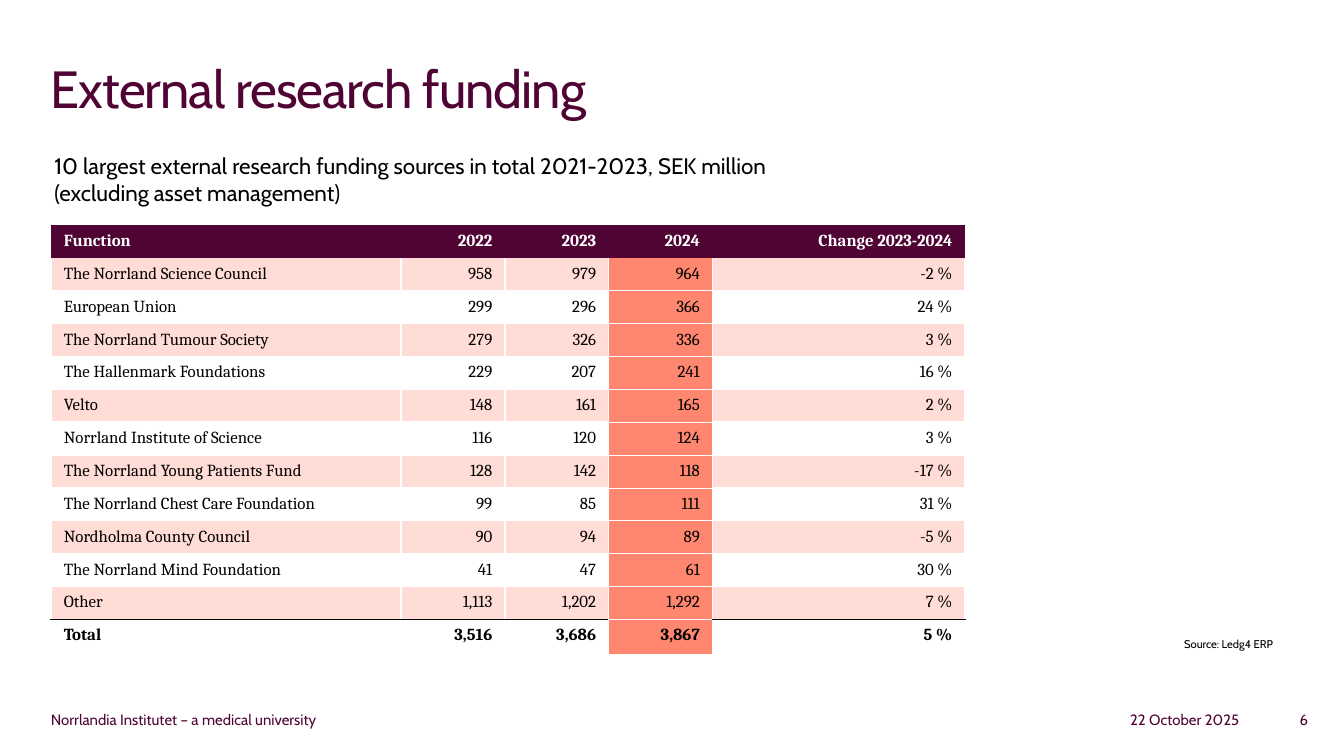
import pptx
import pptx.util
import pptx.dml.color
import pptx.enum.text
import pptx.oxml.ns
import lxml.etree

Pt = pptx.util.Pt
RGB = pptx.dml.color.RGBColor
LEFT = pptx.enum.text.PP_ALIGN.LEFT
RIGHT = pptx.enum.text.PP_ALIGN.RIGHT
qn = pptx.oxml.ns.qn

PLUM = RGB(0x4F, 0x04, 0x33)
CORAL = RGB(0xFF, 0x87, 0x6F)
BLUSH = RGB(0xFF, 0xDD, 0xD6)
BLACK = RGB(0, 0, 0)
WHITE = RGB(0xFF, 0xFF, 0xFF)

HIGHLIGHT_COL = 3
COL_WIDTHS = [187.5, 55.6, 55.6, 55.6, 135.3]
ROW_HEIGHT, TOTAL_HEIGHT = 16.6, 18.7
FUNDING = [
    ("Function", "2022", "2023", "2024", "Change 2023-2024"),
    ("The Norrland Science Council", "958", "979", "964", "-2 %"),
    ("European Union", "299", "296", "366", "24 %"),
    ("The Norrland Tumour Society", "279", "326", "336", "3 %"),
    ("The Hallenmark Foundations", "229", "207", "241", "16 %"),
    ("Velto", "148", "161", "165", "2 %"),
    ("Norrland Institute of Science", "116", "120", "124", "3 %"),
    ("The Norrland Young Patients Fund", "128", "142", "118", "-17 %"),
    ("The Norrland Chest Care Foundation", "99", "85", "111", "31 %"),
    ("Nordholma County Council", "90", "94", "89", "-5 %"),
    ("The Norrland Mind Foundation", "41", "47", "61", "30 %"),
    ("Other", "1,113", "1,202", "1,292", "7 %"),
    ("Total", "3,516", "3,686", "3,867", "5 %"),
]
TOTAL_ROW = len(FUNDING) - 1


def add_run(p, text, size, color, font="Cabin", bold=False):
    r = p.add_run()
    r.text = text
    r.font.name = font
    r.font.size = Pt(size)
    r.font.bold = bold
    r.font.color.rgb = color
    return r


def add_text(s, box, lines, size, color, align=LEFT, spacing=0):
    tf = s.shapes.add_textbox(*map(Pt, box)).text_frame
    tf.word_wrap = True
    p = tf.paragraphs[0]
    p.alignment = align
    for i, line in enumerate(lines):
        if i:
            p.add_line_break()
        r = add_run(p, line, size, color)
        if spacing:
            r.font._element.set("spc", str(round(spacing * 100)))


def add_border(cell, side, border):
    ln = lxml.etree.SubElement(cell._tc.get_or_add_tcPr(), qn("a:ln" + side))
    if border is None:
        ln.set("w", "0")
        lxml.etree.SubElement(ln, qn("a:noFill"))
        return
    color, width = border
    ln.set("w", str(Pt(width)))
    fill = lxml.etree.SubElement(ln, qn("a:solidFill"))
    lxml.etree.SubElement(fill, qn("a:srgbClr")).set("val", str(color))


def row_rule(row, col):
    if row == 0:
        return None
    if col == HIGHLIGHT_COL:
        return WHITE, 0.25
    return (BLACK, 0.5) if row == TOTAL_ROW - 1 else (WHITE, 1)


def column_rule(col):
    return WHITE, 0.25 if col in (HIGHLIGHT_COL, HIGHLIGHT_COL + 1) else 1


def cell_borders(row, col):
    body = 0 < row < TOTAL_ROW
    return {
        "L": column_rule(col) if body else None,
        "R": column_rule(col + 1) if body else None,
        "T": row_rule(row - 1, col) if row else None,
        "B": row_rule(row, col) if body else None,
    }


def cell_fill(row, col):
    if row == 0:
        return PLUM
    if col == HIGHLIGHT_COL:
        return CORAL
    return BLUSH if row % 2 and row < TOTAL_ROW else WHITE


def style_cell(cell, text, row, col):
    for side, border in cell_borders(row, col).items():
        add_border(cell, side, border)
    cell.fill.solid()
    cell.fill.fore_color.rgb = cell_fill(row, col)
    cell.margin_left = cell.margin_right = Pt(6.8)
    cell.margin_top = cell.margin_bottom = Pt(3.4)
    p = cell.text_frame.paragraphs[0]
    p.alignment = RIGHT if col else LEFT
    color = BLACK if row else WHITE
    add_run(p, text, 9, color, "Cambria", row in (0, TOTAL_ROW))


def add_funding_table(s, left, top):
    heights = [ROW_HEIGHT] * TOTAL_ROW + [TOTAL_HEIGHT]
    table = s.shapes.add_table(
        len(heights), len(COL_WIDTHS),
        Pt(left), Pt(top), Pt(sum(COL_WIDTHS)), Pt(sum(heights))).table
    table.horz_banding = False
    for column, width in zip(table.columns, COL_WIDTHS):
        column.width = Pt(width)
    for row, (values, height) in enumerate(zip(FUNDING, heights)):
        table.rows[row].height = Pt(height)
        for col, text in enumerate(values):
            style_cell(table.cell(row, col), text, row, col)


def main():
    prs = pptx.Presentation()
    prs.slide_width, prs.slide_height = Pt(720), Pt(405)
    s = prs.slides.add_slide(prs.slide_layouts[6])
    add_text(s, (20.2, 26.6, 612, 35.3), ["External research funding"], 28, PLUM,
             spacing=-0.5)
    add_text(s, (22, 77.8, 442, 36),
             ["10 largest external research funding sources in total 2021-2023, SEK million",
              "(excluding asset management)"], 12, BLACK)
    add_text(s, (588.2, 337.7, 100.8, 18), ["Source: Ledg4 ERP"], 6, BLACK, RIGHT)
    footers = [
        (20.2, 203.8, "Norrlandia Institutet – a medical university", LEFT),
        (521.3, 149.8, "22 October 2025", RIGHT),
        (653.8, 54, "6", RIGHT),
    ]
    for left, width, text, align in footers:
        add_text(s, (left, 377.3, width, 13.7), [text], 8, PLUM, align)
    add_funding_table(s, 27.4, 120.5)
    prs.save("out.pptx")


if __name__ == "__main__":
    main()
